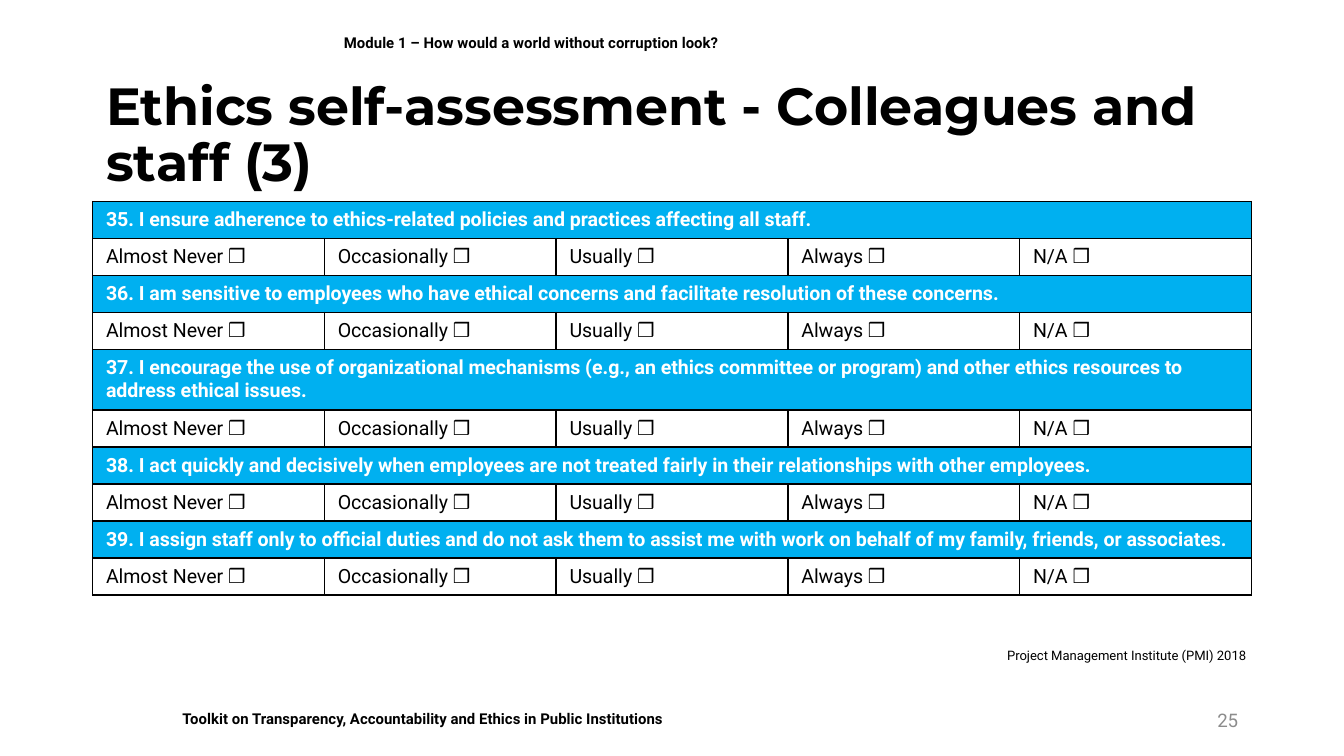
from lxml import etree
from pptx import Presentation
from pptx import util as u
from pptx.dml import color
from pptx.enum import text
from pptx.oxml import ns

COLORS = {"black": "000000", "white": "FFFFFF", "blue": "00B0F0", "grey": "8C8C8C"}
STATEMENTS = [
    "35. I ensure adherence to ethics-related policies and practices affecting all staff.",
    "36. I am sensitive to employees who have ethical concerns and facilitate resolution of these concerns.",
    "37. I encourage the use of organizational mechanisms (e.g., an ethics committee or program) "
    "and other ethics resources to address ethical issues.",
    "38. I act quickly and decisively when employees are not treated fairly in their relationships "
    "with other employees.",
    "39. I assign staff only to official duties and do not ask them to assist me with work on behalf "
    "of my family, friends, or associates.",
]
ANSWERS = ["Almost Never", "Occasionally", "Usually", "Always", "N/A"]
TWO_LINE_STATEMENT = 2


def rgb(name):
    """Return the named colour."""
    return color.RGBColor.from_string(COLORS[name])


def place(shape, left, top, width, height):
    """Move and size a shape, in centimetres."""
    shape.left, shape.top = u.Cm(left), u.Cm(top)
    shape.width, shape.height = u.Cm(width), u.Cm(height)


def write(frame, content, size, tint="black", bold=False, font="Roboto", align=text.PP_ALIGN.LEFT):
    """Fill a text frame with one formatted paragraph."""
    frame.text = content
    frame.word_wrap = True
    para = frame.paragraphs[0]
    para.alignment = align
    for span in para.runs:
        span.font.name, span.font.size, span.font.bold = font, u.Pt(size), bold
        span.font.color.rgb = rgb(tint)


def add_title(page, content):
    """Format the title placeholder."""
    title = page.shapes.title
    place(title, 1.75, 1.63, 21.9, 1.9)
    write(title.text_frame, content, 28, bold=True, font="Montserrat")
    title.text_frame.auto_size = text.MSO_AUTO_SIZE.NONE
    title.text_frame.vertical_anchor = text.MSO_ANCHOR.MIDDLE
    title.text_frame.paragraphs[0].line_spacing = 0.9


def add_label(page, area, content, size, anchor=text.MSO_ANCHOR.MIDDLE, **style):
    """Add a one-line text box."""
    box = page.shapes.add_textbox(*map(u.Cm, area))
    write(box.text_frame, content, size, **style)
    box.text_frame.vertical_anchor = anchor
    return box


def outline(cell):
    """Draw a thin black border round a cell."""
    properties = cell._tc.get_or_add_tcPr()
    for side in ("a:lnL", "a:lnR", "a:lnT", "a:lnB"):
        line = etree.SubElement(properties, ns.qn(side), w=str(u.Pt(1)))
        fill = etree.SubElement(line, ns.qn("a:solidFill"))
        etree.SubElement(fill, ns.qn("a:srgbClr"), val=COLORS["black"])


def add_questionnaire(page):
    """Add the table of statements, each above its row of answers."""
    row_count, column_count = 2 * len(STATEMENTS), len(ANSWERS)
    area = map(u.Cm, (1.75, 3.81, 21.9, 7.45))
    table = page.shapes.add_table(row_count, column_count, *area).table
    table.first_row = table.horz_banding = False
    for column in table.columns:
        column.width = u.Cm(4.38)
    for row in table.rows:
        row.height = u.Cm(0.7)
    table.rows[2 * TWO_LINE_STATEMENT].height = u.Cm(1.15)
    for cell in table.iter_cells():
        outline(cell)
        cell.fill.background()
    for index, statement in enumerate(STATEMENTS):
        top = 2 * index
        heading = table.cell(top, 0)
        heading.merge(table.cell(top, column_count - 1))
        heading.fill.solid()
        heading.fill.fore_color.rgb = rgb("blue")
        write(heading.text_frame, statement, 10.5, "white", bold=True)
        for column, answer in enumerate(ANSWERS):
            write(table.cell(top + 1, column).text_frame, f"{answer} ❒", 10.5)


def main():
    """Build the deck."""
    deck = Presentation()
    deck.slide_width, deck.slide_height = u.Cm(25.4), u.Cm(14.29)
    page = deck.slides.add_slide(deck.slide_layouts[5])
    right, top = text.PP_ALIGN.RIGHT, text.MSO_ANCHOR.TOP
    footer = add_label(page, (3.2, 13.28, 18.21, 0.6),
                       "Toolkit on Transparency, Accountability and Ethics in Public Institutions",
                       8, top, bold=True)
    footer.fill.solid()
    footer.fill.fore_color.rgb = rgb("white")
    add_questionnaire(page)
    add_label(page, (6.25, 0.25, 17.4, 1.12),
              "Module 1 – How would a world without corruption look?", 8, bold=True)
    add_label(page, (17.93, 13.23, 5.72, 0.76), "25", 10, tint="grey", align=right)
    add_title(page, "Ethics self-assessment - Colleagues and staff (3)")
    add_label(page, (18.77, 12.12, 5.03, 0.56),
              "Project Management Institute (PMI) 2018", 7, top, align=right)
    deck.save("out.pptx")


if __name__ == "__main__":
    main()
